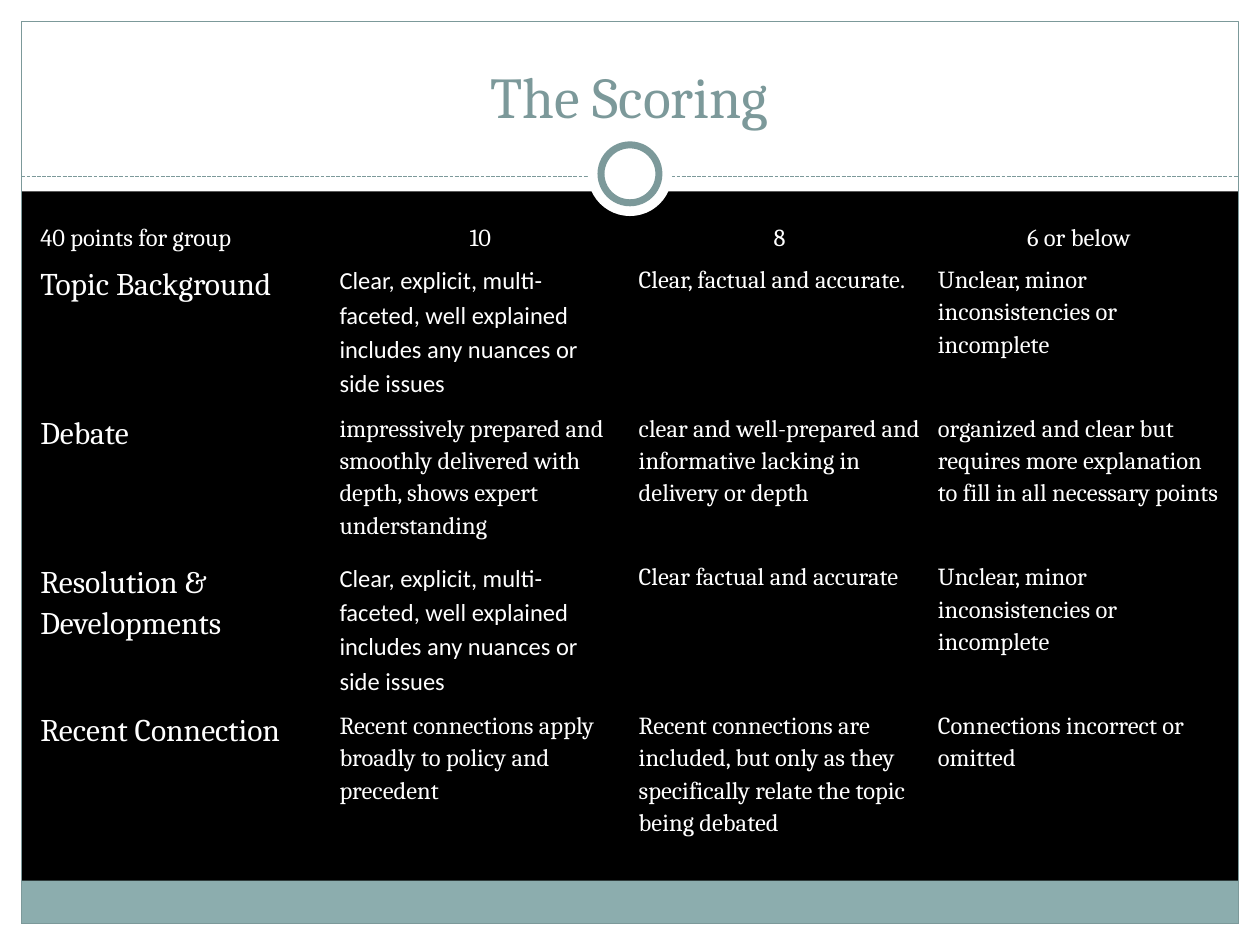
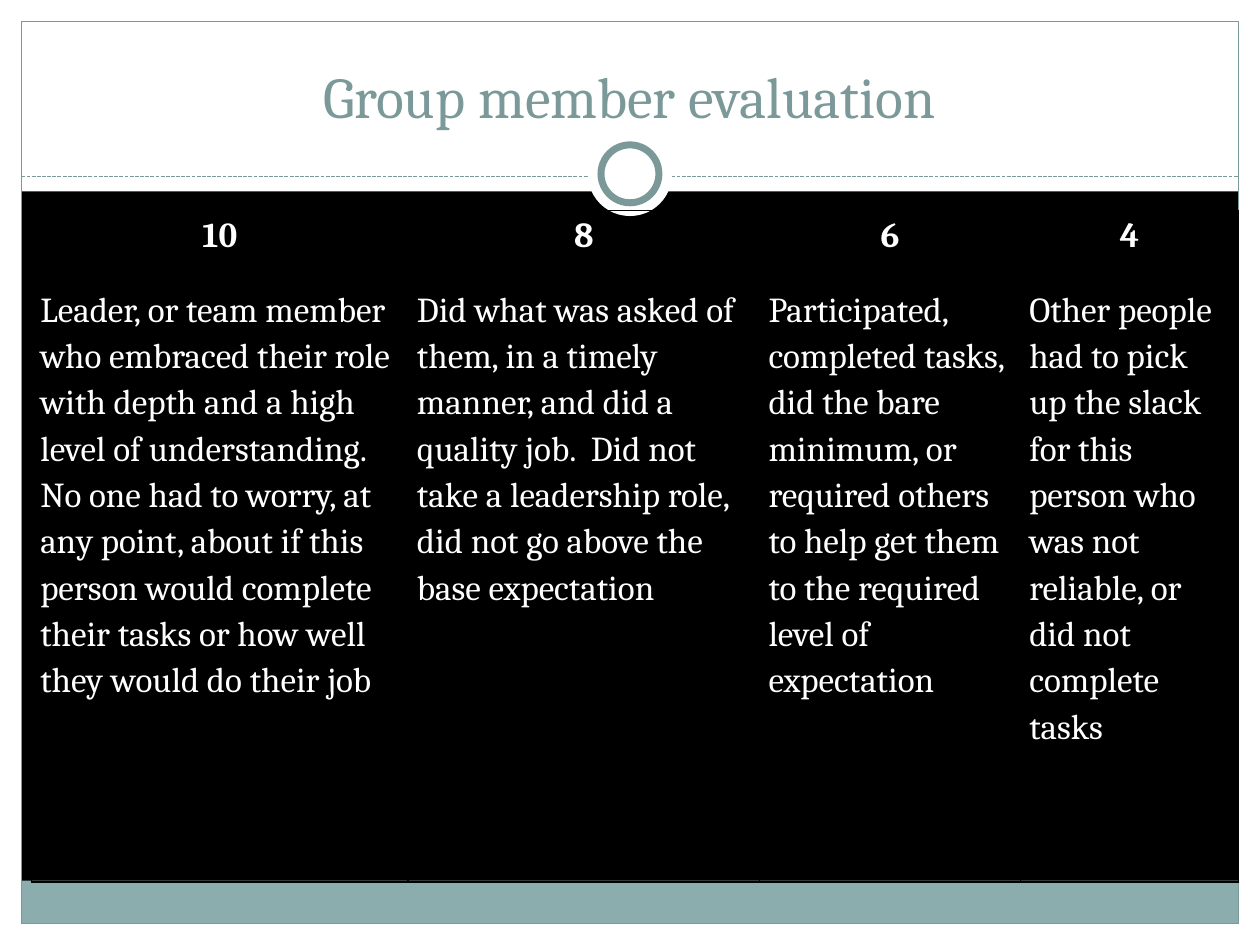
"""Build the two debate grading slides: the scoring rubric and the member evaluation."""
from dataclasses import dataclass
from typing import Optional

import pptx
import pptx.dml.color
import pptx.enum.dml
import pptx.enum.shapes
import pptx.enum.text
import pptx.oxml
import pptx.oxml.ns
import pptx.util
from pptx.util import Inches

SHAPES = pptx.enum.shapes.MSO_SHAPE
ALIGN = pptx.enum.text.PP_ALIGN
ANCHOR = pptx.enum.text.MSO_ANCHOR


@dataclass(frozen=True)
class Theme:
    white: str = "FFFFFF"
    black: str = "000000"
    sage: str = "7C999A"
    footer: str = "8CADAE"
    serif: str = "Cambria"
    sans: str = "Calibri"
    title_size: float = 33
    score_size: float = 20
    criterion_size: float = 18
    body_size: float = 14
    hairline: float = 0.75
    ring_line: float = 4
    cell_border: float = 1
    line_spacing: float = 1.15


THEME = Theme()


@dataclass(frozen=True)
class Panel:
    left: float
    top: float
    width: float
    height: float
    fill: Optional[str] = None
    line: Optional[str] = None
    line_width: float = THEME.hairline
    kind: SHAPES = SHAPES.RECTANGLE


@dataclass(frozen=True)
class Entry:
    text: str
    size: float = THEME.body_size
    font: str = THEME.serif
    bold: bool = False
    align: ALIGN = ALIGN.LEFT
    color: str = THEME.white


@dataclass(frozen=True)
class Grid:
    left: float
    top: float
    widths: list[float]
    heights: list[float]
    rows: list[list[Entry]]


WIDTH, HEIGHT, MARGIN = 10, 7.5, 0.17
INNER_WIDTH, INNER_HEIGHT = WIDTH - 2 * MARGIN, HEIGHT - 2 * MARGIN
RULE_Y = 1.4
RING_Y = 1.38


def disc(diameter: float, line: Optional[str] = None) -> Panel:
    return Panel(WIDTH / 2 - diameter / 2, RING_Y - diameter / 2, diameter, diameter,
                 THEME.white, line, THEME.ring_line, SHAPES.OVAL)


BACKDROP = [
    Panel(0, HEIGHT - MARGIN, WIDTH, MARGIN, THEME.white),
    Panel(0, 0, WIDTH, 1.52, THEME.white),
    Panel(0, 0, MARGIN, HEIGHT, THEME.white),
    Panel(WIDTH - MARGIN, 0, MARGIN, HEIGHT, THEME.white),
    Panel(MARGIN, 6.99, INNER_WIDTH, 0.34, THEME.footer),
    Panel(MARGIN, MARGIN, INNER_WIDTH, INNER_HEIGHT, line=THEME.sage),
]
RING = [disc(0.67), disc(0.46, THEME.sage)]


def rgb(code: str) -> pptx.dml.color.RGBColor:
    return pptx.dml.color.RGBColor.from_string(code)


def draw_panel(slide, panel: Panel) -> None:
    shape = slide.shapes.add_shape(panel.kind, Inches(panel.left), Inches(panel.top),
                                   Inches(panel.width), Inches(panel.height))
    shape.shadow.inherit = False
    if panel.fill:
        shape.fill.solid()
        shape.fill.fore_color.rgb = rgb(panel.fill)
    else:
        shape.fill.background()
    if panel.line:
        shape.line.color.rgb = rgb(panel.line)
        shape.line.width = pptx.util.Pt(panel.line_width)
    else:
        shape.line.fill.background()


def draw_rule(slide) -> None:
    rule = slide.shapes.add_connector(
        pptx.enum.shapes.MSO_CONNECTOR.STRAIGHT, Inches(MARGIN), Inches(RULE_Y),
        Inches(WIDTH - MARGIN), Inches(RULE_Y))
    rule.line.color.rgb = rgb(THEME.sage)
    rule.line.width = pptx.util.Pt(THEME.hairline)
    rule.line.dash_style = pptx.enum.dml.MSO_LINE.SQUARE_DOT
    properties = rule._element.spPr
    properties.append(properties.makeelement(pptx.oxml.ns.qn("a:effectLst"), {}))


def write(frame, entry: Entry, spacing: Optional[float] = None) -> None:
    paragraph = frame.paragraphs[0]
    paragraph.alignment = entry.align
    paragraph.line_spacing = spacing
    run = paragraph.add_run()
    run.text = entry.text
    run.font.name = entry.font
    run.font.size = pptx.util.Pt(entry.size)
    run.font.bold = entry.bold
    run.font.color.rgb = rgb(entry.color)


def draw_title(slide, text: str) -> None:
    title = slide.shapes.add_textbox(Inches(0.33), Inches(0.25), Inches(9.33), Inches(0.83))
    title.text_frame.word_wrap = True
    title.text_frame.vertical_anchor = ANCHOR.BOTTOM
    write(title.text_frame, Entry(text, THEME.title_size, align=ALIGN.CENTER, color=THEME.sage))


def border_cell(cell) -> None:
    properties = cell._tc.get_or_add_tcPr()
    for index, side in enumerate(("lnL", "lnR", "lnT", "lnB")):
        properties.insert(index, pptx.oxml.parse_xml(
            f'<a:{side} {pptx.oxml.ns.nsdecls("a")} w="{pptx.util.Pt(THEME.cell_border)}">'
            f'<a:solidFill><a:srgbClr val="{THEME.black}"/></a:solidFill></a:{side}>'))


def draw_grid(slide, grid: Grid) -> None:
    table = slide.shapes.add_table(
        len(grid.heights), len(grid.widths), Inches(grid.left), Inches(grid.top),
        Inches(sum(grid.widths)), Inches(sum(grid.heights))).table
    table.first_row = table.horz_banding = False
    for column, width in zip(table.columns, grid.widths):
        column.width = Inches(width)
    for row, height, entries in zip(table.rows, grid.heights, grid.rows):
        row.height = Inches(height)
        for cell, entry in zip(row.cells, entries):
            cell.margin_left = cell.margin_right = Inches(0.07)
            cell.margin_top = cell.margin_bottom = 0
            cell.fill.background()
            border_cell(cell)
            write(cell.text_frame, entry, THEME.line_spacing)


def criterion(name: str, best: Entry, middle: str, low: str) -> list[Entry]:
    return [Entry(name, THEME.criterion_size), best, Entry(middle), Entry(low)]


def add_grading_slide(deck, title: str, grid: Grid) -> None:
    slide = deck.slides.add_slide(deck.slide_layouts[6])
    slide.background.fill.solid()
    slide.background.fill.fore_color.rgb = rgb(THEME.black)
    for panel in BACKDROP:
        draw_panel(slide, panel)
    draw_rule(slide)
    for panel in RING:
        draw_panel(slide, panel)
    draw_title(slide, title)
    draw_grid(slide, grid)


EXPLICIT = Entry("Clear, explicit, multi-faceted, well explained includes any nuances or side issues",
                 font=THEME.sans)
UNCLEAR = "Unclear, minor inconsistencies or incomplete"

SCORING = Grid(0.25, 1.75, [9.5 / 4] * 4, [0.33, 1.18, 1.18, 1.18, 1.31], [
    [Entry("40 points for group"),
     *(Entry(score, align=ALIGN.CENTER) for score in ("10", "8", "6 or below"))],
    criterion("Topic Background", EXPLICIT, "Clear, factual and accurate.", UNCLEAR),
    criterion("Debate",
              Entry("impressively prepared and smoothly delivered with depth, "
                    "shows expert understanding"),
              "clear and well-prepared and informative lacking in delivery or depth",
              "organized and clear but requires more explanation to fill in all necessary points"),
    criterion("Resolution & Developments", EXPLICIT, "Clear factual and accurate", UNCLEAR),
    criterion("Recent Connection",
              Entry("Recent connections apply broadly to policy and precedent"),
              "Recent connections are included, but only as they specifically relate "
              "the topic being debated",
              "Connections incorrect or omitted"),
])

MEMBER_LEVELS = {
    "10": "Leader, or team member who embraced their role with depth and a high level of "
          "understanding.  No one had to worry, at any point, about if this person would "
          "complete their tasks or how well they would do their job",
    "8": "Did what was asked of them, in a timely manner, and did a quality job.  Did not take "
         "a leadership role, did not go above the base expectation",
    "6": "Participated, completed tasks, did the bare minimum, or required others to help get "
         "them to the required level of expectation",
    "4": "Other people had to pick up the slack for this person who was not reliable, or did "
         "not complete tasks",
}

EVALUATION = Grid(0.25, 1.67, [2.99, 2.79, 2.07, 1.73], [0.59, 4.74], [
    [Entry(score, THEME.score_size, bold=True, align=ALIGN.CENTER) for score in MEMBER_LEVELS],
    [Entry(level, THEME.score_size) for level in MEMBER_LEVELS.values()],
])


def main() -> None:
    deck = pptx.Presentation()
    deck.slide_width, deck.slide_height = Inches(WIDTH), Inches(HEIGHT)
    add_grading_slide(deck, "The Scoring", SCORING)
    add_grading_slide(deck, "Group member evaluation", EVALUATION)
    deck.save("out.pptx")


if __name__ == "__main__":
    main()
